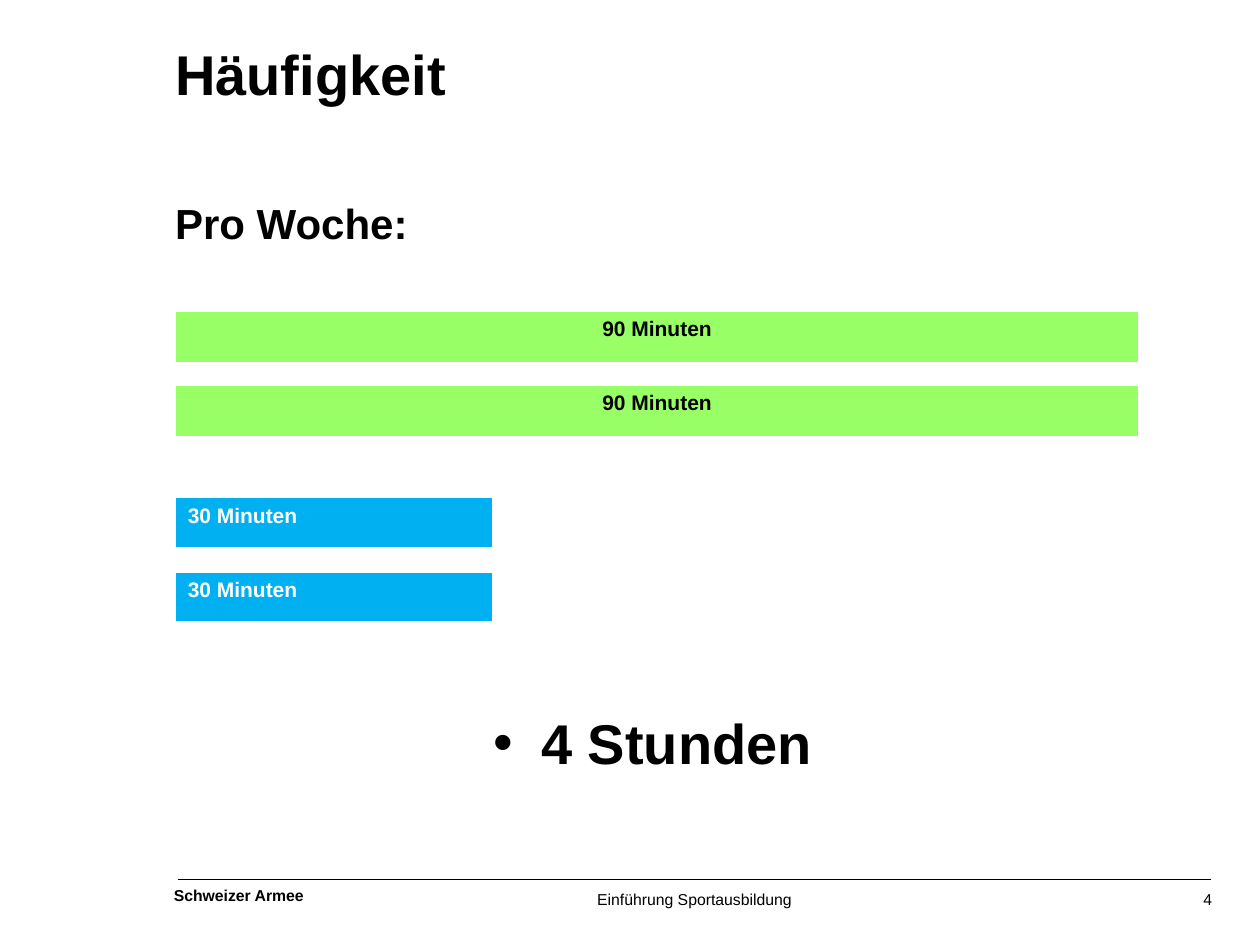
from lxml import etree
from pptx import Presentation, util as u
from pptx.dml.color import RGBColor
from pptx.enum import shapes, text
from pptx.oxml import ns

COLS, ROWS = 100, 75  # grid of the 10 x 7.5 inch slide
LEFT = 13.9
BLACK, WHITE, GREEN, BLUE = "000000", "FFFFFF", "99FF66", "00B0F0"
ALIGN = text.PP_ALIGN


def color(hex_value):
    return RGBColor.from_string(hex_value)


class Sheet:
    """Holds the style and the current slide; lengths are grid columns and rows."""
    font = "Arial"

    def __init__(self, deck):
        self.col, self.row = deck.slide_width / COLS, deck.slide_height / ROWS
        self.slide = deck.slides.add_slide(deck.slide_layouts[1])

    def box(self, x, y, width, height):
        return [round(n) for n in (x * self.col, y * self.row,
                                   width * self.col, height * self.row)]

    def set_words(self, frame, words, size, bold=True, ink=BLACK, align=ALIGN.LEFT):
        frame.text = words
        paragraph = frame.paragraphs[0]
        paragraph.alignment = align
        paragraph.space_before = u.Pt(0)
        style = {"name": self.font, "size": u.Pt(size), "bold": bold}
        for key, value in style.items():
            setattr(paragraph.font, key, value)
        paragraph.font.color.rgb = color(ink)

    def clear_frame(self, frame):
        layout = {"margin_left": 0, "margin_top": 0, "margin_right": 0,
                  "margin_bottom": 0, "word_wrap": True,
                  "auto_size": text.MSO_AUTO_SIZE.NONE,
                  "vertical_anchor": text.MSO_ANCHOR.TOP}
        for key, value in layout.items():
            setattr(frame, key, value)

    def placeholder(self, index, place, words, size, bullet=None):
        holder = self.slide.placeholders[index]
        for key, value in zip(("left", "top", "width", "height"), self.box(*place)):
            setattr(holder, key, value)
        frame = holder.text_frame
        self.clear_frame(frame)
        if bullet:
            props = frame.paragraphs[0]._p.get_or_add_pPr()
            indent = u.Inches(0.38)
            props.set("marL", str(indent))
            props.set("indent", str(-indent))
            etree.SubElement(props, ns.qn("a:buChar"), char=bullet)
        self.set_words(frame, words, size)

    def label(self, place, words, size, **style):
        frame = self.slide.shapes.add_textbox(*self.box(*place)).text_frame
        self.clear_frame(frame)
        self.set_words(frame, words, size, **style)

    def bar(self, place, words, fill, ink, align, bottom_border):
        """A one-cell table that stands for a training unit."""
        table = self.slide.shapes.add_table(1, 1, *self.box(*place)).table
        table.first_row = table.horz_banding = False
        cell = table.cell(0, 0)
        self.set_words(cell.text_frame, words, 12, ink=ink, align=align)
        cell.fill.solid()
        cell.fill.fore_color.rgb = color(fill)
        props = cell._tc.get_or_add_tcPr()
        borders = {"lnL": 1, "lnR": 1, "lnT": 1, "lnB": bottom_border}
        for order, (side, width) in enumerate(borders.items()):
            edge = etree.Element(ns.qn(f"a:{side}"), w=str(u.Pt(width)))
            paint = etree.SubElement(edge, ns.qn("a:solidFill"))
            etree.SubElement(paint, ns.qn("a:srgbClr"), val=WHITE)
            props.insert(order, edge)

    def rule(self, x1, x2, y):
        ends = self.box(x1, y, x2, y)
        line = self.slide.shapes.add_connector(shapes.MSO_CONNECTOR.STRAIGHT, *ends)
        line.line.color.rgb = color(BLACK)
        line.line.width = u.Pt(0.75)
        etree.SubElement(line._element.spPr, ns.qn("a:effectLst"))


def main():
    deck = Presentation()
    deck.slide_width, deck.slide_height = u.Inches(10), u.Inches(7.5)
    sheet = Sheet(deck)

    sheet.placeholder(0, (LEFT, 3.1, 81.6, 10.8), "Häufigkeit", 32)
    sheet.label((LEFT, 15.7, 84.3, 4.1), "Pro Woche:", 24)

    bar_height, bar_step = 4.1, 5.9
    units = [
        (24.7, 76.5, "90 Minuten", GREEN, BLACK, ALIGN.CENTER, 1),
        (39.5, 25.2, "30 Minuten", BLUE, WHITE, ALIGN.LEFT, 3),
    ]
    for top, width, *look in units:
        for repeat in range(2):
            place = (LEFT, top + repeat * bar_step, width, bar_height)
            sheet.bar(place, *look)

    sheet.placeholder(1, (39.2, 56.2, 30.6, 5.4), "4 Stunden", 32, bullet="➢")

    sheet.rule(14.1, 96.1, 69.8)
    footer = [
        (13.8, 70.3, 12, "Schweizer Armee", True, ALIGN.LEFT),
        (47.4, 70.6, 18, "Einführung Sportausbildung", False, ALIGN.LEFT),
        (93.7, 70.6, 2.5, "4", False, ALIGN.RIGHT),
    ]
    for x, y, width, words, bold, align in footer:
        sheet.label((x, y, width, 1.5), words, 9, bold=bold, align=align)

    deck.save("out.pptx")


if __name__ == "__main__":
    main()
